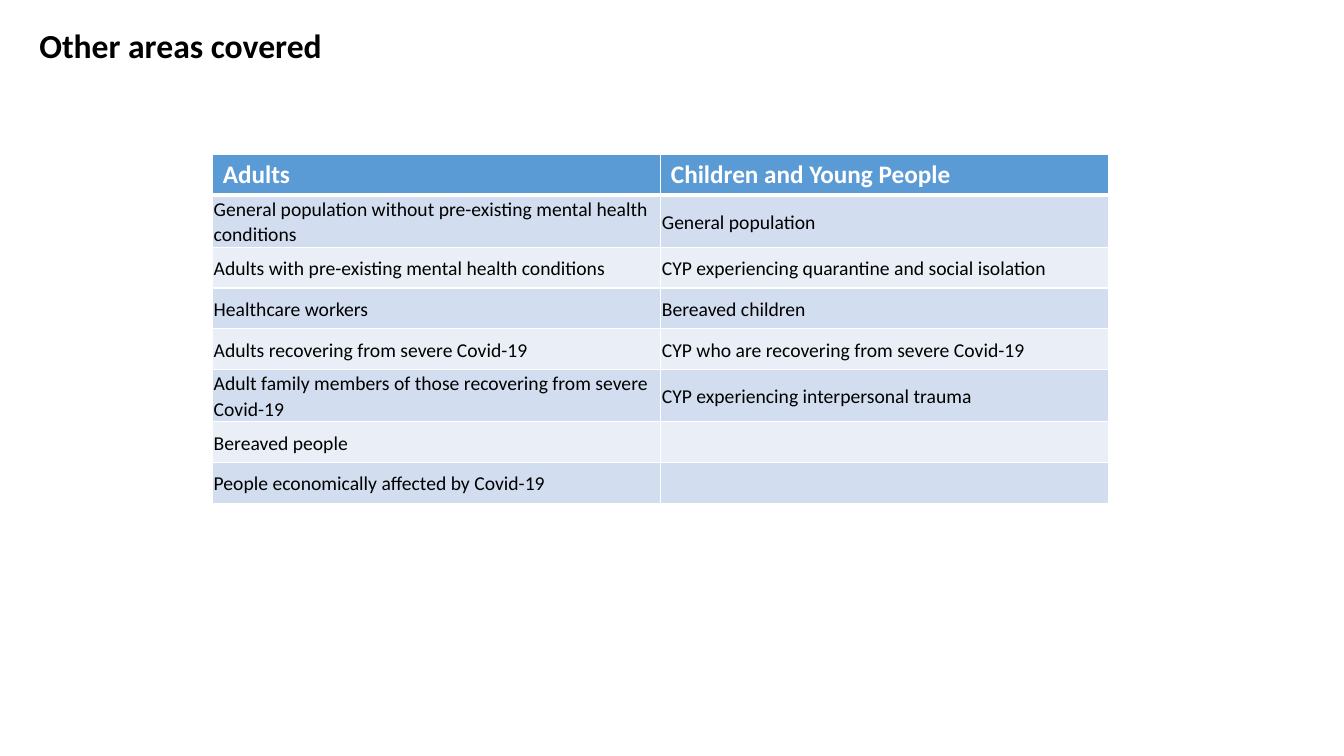
from lxml.etree import SubElement as Sub
from pptx import Presentation
from pptx.dml.color import RGBColor as Rgb
from pptx.enum.text import MSO_ANCHOR as Anchor, PP_ALIGN as Align
from pptx.oxml.ns import qn
from pptx.util import Inches, Pt

HUES = {"ink": "000000", "white": "FFFFFF", "head": "5B9BD5",
        "odd": "D2DEEF", "even": "EAEFF7"}

ROWS = [
    ("Adults", "Children and Young People"),
    ("General population without pre-existing mental health conditions",
     "General population"),
    ("Adults with pre-existing mental health conditions",
     "CYP experiencing quarantine and social isolation"),
    ("Healthcare workers", "Bereaved children"),
    ("Adults recovering from severe Covid-19",
     "CYP who are recovering from severe Covid-19"),
    ("Adult family members of those recovering from severe Covid-19",
     "CYP experiencing interpersonal trauma"),
    ("Bereaved people", ""),
    ("People economically affected by Covid-19", ""),
]


class Page:
    """Holds the style and the current slide, and draws its elements."""

    def __init__(self, deck, face="Calibri"):
        self.slide = deck.slides.add_slide(deck.slide_layouts[5])
        self.face = face

    def style(self, para, size, hue, bold=False):
        font = para.font
        font.name, font.size, font.bold = self.face, Pt(size), bold
        font.color.rgb = Rgb.from_string(HUES[hue])

    def title(self, text, left, top, width, height):
        box = self.slide.shapes.title
        box.left, box.top = Inches(left), Inches(top)
        box.width, box.height = Inches(width), Inches(height)
        frame = box.text_frame
        frame.text = text
        frame.vertical_anchor = Anchor.MIDDLE
        para = frame.paragraphs[0]
        para.alignment, para.line_spacing = Align.LEFT, 0.9
        self.style(para, 24, "ink", True)

    def edges(self, cell, base):
        props = cell._tc.get_or_add_tcPr()
        sides = {"lnL": 1, "lnR": 1, "lnT": 1, "lnB": base}
        for spot, (side, width) in enumerate(sides.items()):
            line = Sub(props, qn(f"a:{side}"), w=str(Pt(width)))
            fill = Sub(line, qn("a:solidFill"))
            Sub(fill, qn("a:srgbClr"), val=HUES["white"])
            props.insert(spot, line)

    def cell(self, cell, text, row):
        head = row == 0
        hue = "head" if head else "odd" if row % 2 else "even"
        cell.fill.solid()
        cell.fill.fore_color.rgb = Rgb.from_string(HUES[hue])
        self.edges(cell, 3 if row < 1 else 1)
        if not text:
            return
        cell.text = text
        para = cell.text_frame.paragraphs[0]
        if head:
            self.style(para, 18, "white", True)
            return
        self.style(para, 14, "ink")
        para.line_spacing, para.space_after = 1.07, Pt(6)
        cell.vertical_anchor = Anchor.MIDDLE
        cell.margin_left = cell.margin_right = cell.margin_top = Inches(0.01)
        cell.margin_bottom = 0

    def table(self, rows, left, top, width, height):
        grid = self.slide.shapes.add_table(
            len(rows), len(rows[0]), Inches(left), Inches(top),
            Inches(width), Inches(height)).table
        for row, texts in enumerate(rows):
            for col, text in enumerate(texts):
                self.cell(grid.cell(row, col), text, row)


def main():
    deck = Presentation()
    deck.slide_width, deck.slide_height = Inches(13.33), Inches(7.5)
    page = Page(deck)
    page.title("Other areas covered", 0.29, 0.21, 12.16, 0.53)
    page.table(ROWS, 2.11, 1.53, 8.89, 3.24)
    deck.save("out.pptx")


if __name__ == "__main__":
    main()
